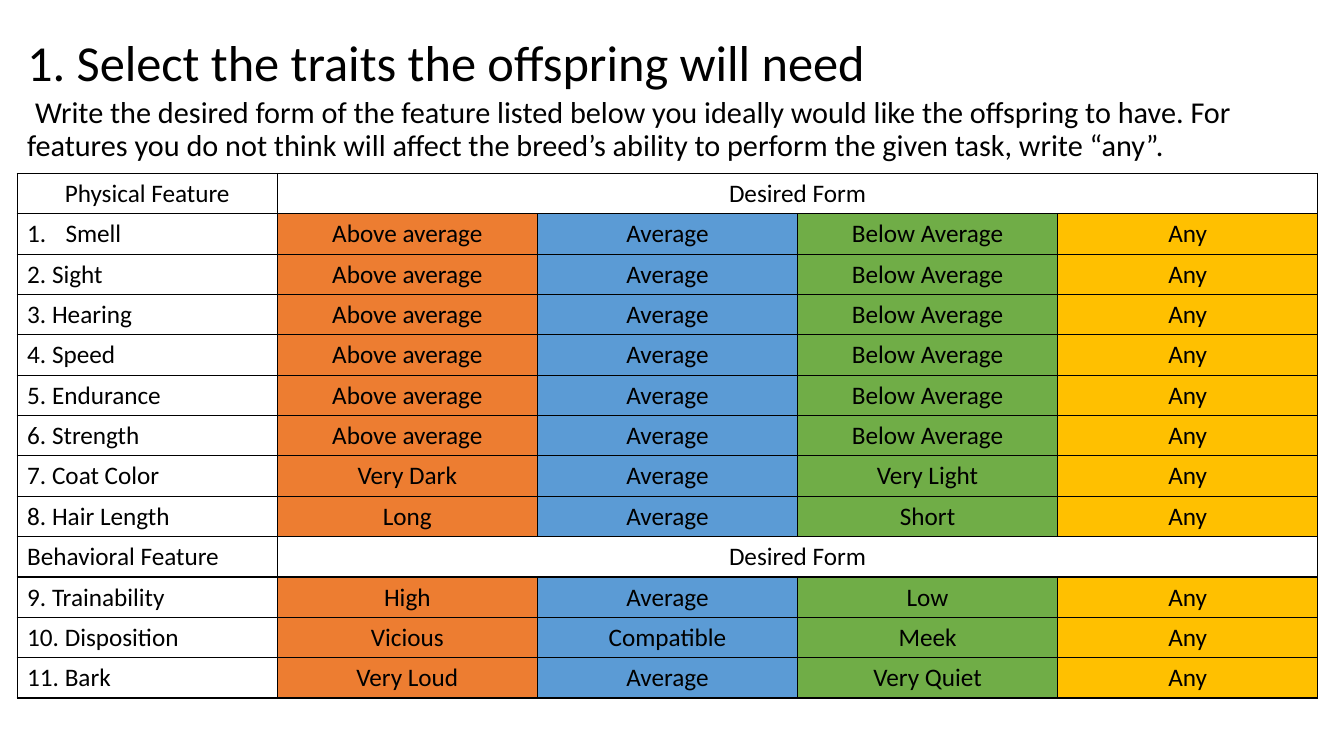
import pptx
import pptx.util
import pptx.dml.color
import pptx.enum.text
import pptx.oxml.ns
import lxml.etree

PX = 9144  # 100 px to the inch
FONT = "Calibri"
BLACK = "000000"
FILLS = [None, "ED7D31", "5B9BD5", "70AD47", "FFC000"]
LEFT = pptx.enum.text.PP_ALIGN.LEFT
MID = pptx.enum.text.PP_ALIGN.CENTER


def color(code):
    return pptx.dml.color.RGBColor.from_string(code)


def write(para, text, size):
    run = para.add_run()
    run.text = text
    looks = {"name": FONT, "size": pptx.util.Pt(size), "bold": False}
    for key, val in looks.items():
        setattr(run.font, key, val)
    run.font.color.rgb = color(BLACK)


deck = pptx.Presentation()
deck.slide_width, deck.slide_height = 1333 * PX, 750 * PX
slide = deck.slides.add_slide(deck.slide_layouts[6])

# Title and task
box = slide.shapes.add_textbox(17 * PX, 13 * PX, 1290 * PX, 174 * PX)
frame = box.text_frame
frame.word_wrap = True
frame.vertical_anchor = pptx.enum.text.MSO_ANCHOR.MIDDLE
para = frame.paragraphs[0]
para.line_spacing = 0.9
write(para, "1. Select the traits the offspring will need", 36)
para.add_line_break()
write(para, " ", 25.2)
write(para, "Write the desired form of the feature listed below you ideally "
      "would like the offspring to have. For features you do not think will "
      "affect the breed’s ability to perform the given task, write “any”.", 21.6)

# Rows: a heading has one form, a trait has four
scale = ["Above average", "Average", "Below Average", "Any"]
rows = [
    ["Physical Feature", "Desired Form"],
    ["Smell"] + scale,
    ["2. Sight"] + scale,
    ["3. Hearing"] + scale,
    ["4. Speed"] + scale,
    ["5. Endurance"] + scale,
    ["6. Strength"] + scale,
    ["7. Coat Color", "Very Dark", "Average", "Very Light", "Any"],
    ["8. Hair Length", "Long", "Average", "Short", "Any"],
    ["Behavioral Feature", "Desired Form"],
    ["9. Trainability", "High", "Average", "Low", "Any"],
    ["10. Disposition", "Vicious", "Compatible", "Meek", "Any"],
    ["11. Bark", "Very Loud", "Average", "Very Quiet", "Any"],
]

# Table
grid = slide.shapes.add_table(len(rows), len(FILLS), 17 * PX, 172 * PX,
                              1290 * PX, 40 * len(rows) * PX).table
grid.first_row = grid.horz_banding = False
for col in grid.columns:
    col.width = 258 * PX

for r, row in enumerate(rows):
    grid.rows[r].height = 40 * PX
    head = len(row) == 2
    if head:
        grid.cell(r, 1).merge(grid.cell(r, 4))
    for c, fill in enumerate(FILLS):
        cell = grid.cell(r, c)
        # Black borders go before the fill
        props = cell._tc.get_or_add_tcPr()
        for side in ("lnL", "lnR", "lnT", "lnB"):
            line = lxml.etree.SubElement(props, pptx.oxml.ns.qn("a:" + side), w="12700")
            solid = lxml.etree.SubElement(line, pptx.oxml.ns.qn("a:solidFill"))
            lxml.etree.SubElement(solid, pptx.oxml.ns.qn("a:srgbClr"), val=BLACK)
        if fill and not head:
            cell.fill.solid()
            cell.fill.fore_color.rgb = color(fill)
        else:
            cell.fill.background()
        if c < len(row):
            para = cell.text_frame.paragraphs[0]
            para.alignment = MID if c or r == 0 else LEFT
            write(para, row[c], 18)

# The first trait has an automatic number
props = grid.cell(1, 0).text_frame.paragraphs[0]._p.get_or_add_pPr()
props.set("marL", str(38 * PX))
props.set("indent", str(-38 * PX))
lxml.etree.SubElement(props, pptx.oxml.ns.qn("a:buFont"), typeface="+mj-lt")
lxml.etree.SubElement(props, pptx.oxml.ns.qn("a:buAutoNum"), type="arabicPeriod")

deck.save("out.pptx")
